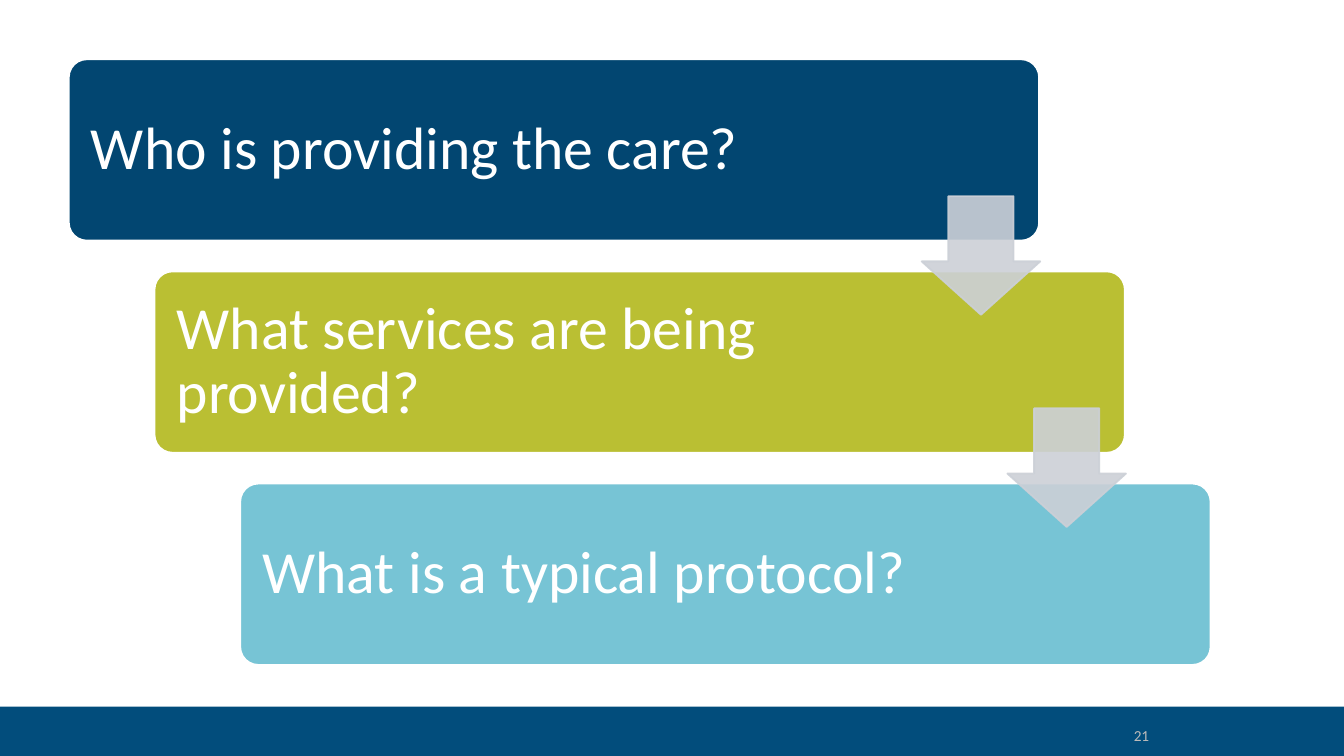
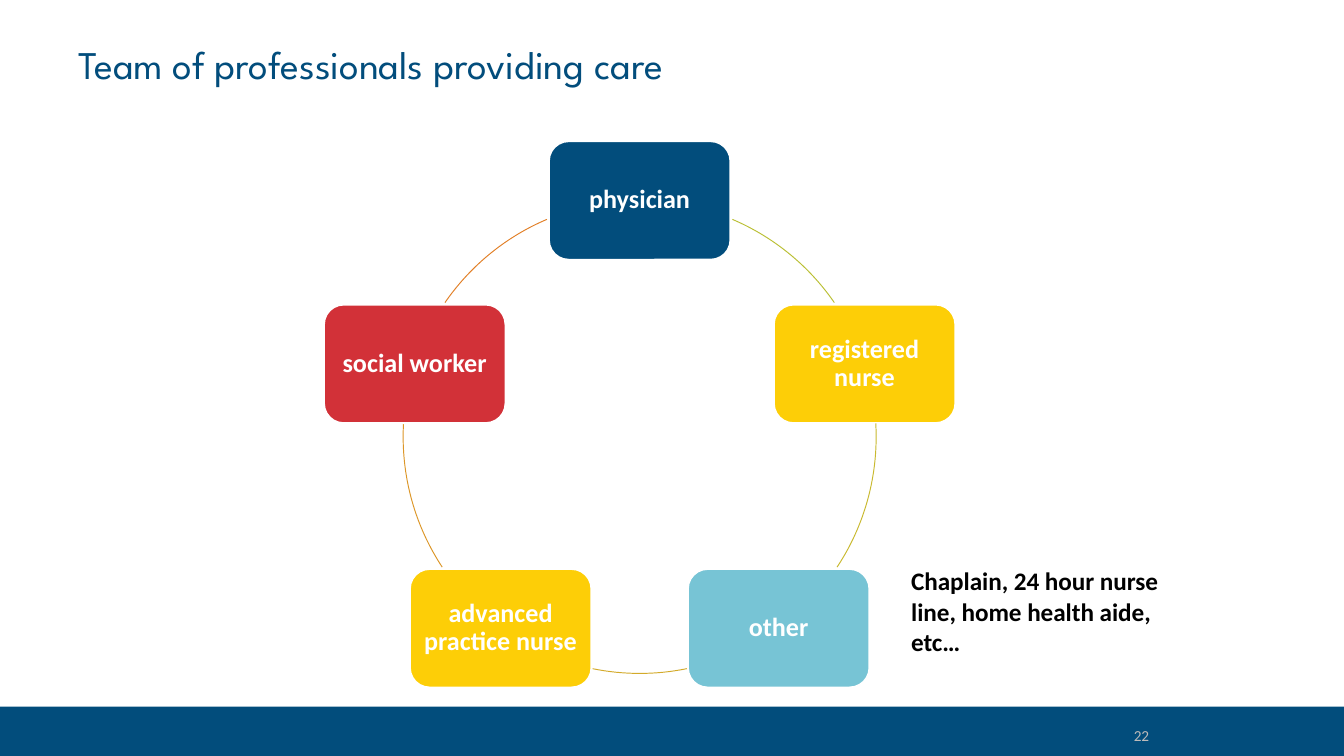
import math
from dataclasses import dataclass

from lxml import etree
from pptx import Presentation
from pptx.dml.color import RGBColor
from pptx.enum import shapes, text
from pptx.oxml import ns
from pptx.util import Cm, Pt


@dataclass(frozen=True)
class Theme:
    navy: str = "024D7C"
    deep_navy: str = "024671"
    lime: str = "BABF33"
    sky: str = "77C4D5"
    yellow: str = "FDCE07"
    red: str = "D23138"
    arrow: str = "CCD0D7"
    white: str = "FFFFFF"
    black: str = "000000"
    page: str = "BEBBBA"
    body_font: str = "Calibri"
    title_font: str = "League Spartan"
    title_size: float = 21
    step_size: float = 32
    card_size: float = 14
    note_size: float = 13.5
    page_size: float = 8.2


T = Theme()
FIRST_PAGE = 21

QUESTIONS = [
    ("Who is providing the care?", T.deep_navy),
    ("What services are being provided?", T.lime),
    ("What is a typical protocol?", T.sky),
]
TEAM_TITLE = "Team of professionals providing care"
# Clockwise from the top: role, card colour
TEAM = [
    ("physician", T.navy),
    ("registered nurse", T.yellow),
    ("other", T.sky),
    ("advanced practice nurse", T.yellow),
    ("social worker", T.red),
]
# Clockwise degrees from east: start, end, colour
ARCS = [
    (293.1, 325.4, T.lime),
    (356.7, 33.4, "C9B92E"),
    (78.5, 101.5, "D3AA2A"),
    (146.6, 183.3, "DC9627"),
    (214.6, 246.9, "E27F26"),
]
NOTE = ["Chaplain, 24 hour nurse line, home health aide,", "etc…"]

WIDTH, HEIGHT = 25.4, 14.29
BAND_TOP = 13.36
STEP_X, STEP_Y, STEP_W, STEP_H = 1.3, 1.12, 18.34, 3.43
SHIFT_X, SHIFT_Y = 1.62, 4.01
ARROW_X, ARROW_Y, ARROW_SIZE = 17.42, 3.71, 2.24
RING_X, RING_Y, RING_R = 12.09, 8.26, 4.47
CARD_W, CARD_H = 3.43, 2.24


def rgb(value):
    return RGBColor.from_string(value)


def style_font(font, size, color, bold=False, name=T.body_font):
    font.name, font.size, font.bold = name, Pt(size), bold
    font.color.rgb = rgb(color)


def add_shape(s, kind, box, fill=None, line=None, line_width=1):
    sp = s.shapes.add_shape(kind, *map(Cm, box))
    sp.shadow.inherit = False
    if fill:
        sp.fill.solid()
        sp.fill.fore_color.rgb = rgb(fill)
    else:
        sp.fill.background()
    if line:
        sp.line.color.rgb = rgb(line)
        sp.line.width = Pt(line_width)
    else:
        sp.line.fill.background()
    return sp


def add_card(s, box, label, fill, size, inset, right=None, bold=False,
             align=text.PP_ALIGN.LEFT):
    sp = add_shape(s, shapes.MSO_SHAPE.ROUNDED_RECTANGLE, box, fill, T.white)
    tf = sp.text_frame
    tf.word_wrap = True
    tf.vertical_anchor = text.MSO_ANCHOR.MIDDLE
    tf.margin_left = tf.margin_top = tf.margin_bottom = Cm(inset)
    tf.margin_right = Cm(right or inset)
    tf.text = label
    p = tf.paragraphs[0]
    p.alignment, p.line_spacing = align, 0.9
    style_font(p.runs[0].font, size, T.white, bold)
    return sp


def add_page_number(s, number):
    """Add a right-aligned slide number field."""
    tf = s.shapes.add_textbox(*map(Cm, (17.68, 13.61, 4.29, 0.76))).text_frame
    tf.word_wrap = True
    p = tf.paragraphs[0]
    p.alignment = text.PP_ALIGN.RIGHT
    r = p.add_run()
    r.text = str(number)
    style_font(r.font, T.page_size, T.page)
    r_xml = r.font._element.getparent()
    r_xml.tag = ns.qn("a:fld")
    r_xml.set("id", "{B6F15528-21DE-4FAA-801E-634DDDAF4B2B}")
    r_xml.set("type", "slidenum")


def new_slide(prs, layout):
    s = prs.slides.add_slide(prs.slide_layouts[layout])
    add_shape(s, shapes.MSO_SHAPE.RECTANGLE,
              (0, BAND_TOP, WIDTH, HEIGHT - BAND_TOP), T.navy)
    add_page_number(s, FIRST_PAGE + len(prs.slides) - 1)
    return s


def add_arrow(s, i):
    box = (ARROW_X + i * SHIFT_X, ARROW_Y + i * SHIFT_Y, ARROW_SIZE, ARROW_SIZE)
    sp = add_shape(s, shapes.MSO_SHAPE.DOWN_ARROW, box, T.arrow, T.arrow)
    sp.adjustments[0], sp.adjustments[1] = 0.55, 0.45
    for color in sp.element.spPr.iter(ns.qn("a:srgbClr")):
        etree.SubElement(color, ns.qn("a:alpha")).set("val", "90000")


def build_questions(prs):
    s = new_slide(prs, 6)
    for i, (question, color) in enumerate(QUESTIONS):
        box = (STEP_X + i * SHIFT_X, STEP_Y + i * SHIFT_Y, STEP_W, STEP_H)
        sp = add_card(s, box, question, color, T.step_size, 0.32, right=4.1)
        sp.adjustments[0] = 0.1
    for i in range(len(QUESTIONS) - 1):
        add_arrow(s, i)


def build_team(prs):
    s = new_slide(prs, 5)
    title = s.shapes.title
    title.left, title.top, title.width, title.height = map(
        Cm, (1.3, 0.58, 21.56, 1.25))
    tf = title.text_frame
    tf.text = TEAM_TITLE
    tf.auto_size = text.MSO_AUTO_SIZE.NONE
    tf.margin_left = tf.margin_right = Cm(0.18)
    tf.margin_top = tf.margin_bottom = Cm(0.1)
    p = tf.paragraphs[0]
    p.alignment = text.PP_ALIGN.LEFT
    style_font(p.runs[0].font, T.title_size, T.navy, name=T.title_font)

    ring = (RING_X - RING_R, RING_Y - RING_R, 2 * RING_R, 2 * RING_R)
    for i, ((role, fill), (start, end, line)) in enumerate(zip(TEAM, ARCS)):
        angle = math.radians(360 * i / len(TEAM) - 90)
        x = RING_X + RING_R * math.cos(angle) - CARD_W / 2
        y = RING_Y + RING_R * math.sin(angle) - CARD_H / 2
        add_card(s, (x, y, CARD_W, CARD_H), role, fill, T.card_size, 0.15,
                 bold=True, align=text.PP_ALIGN.CENTER)
        arc = add_shape(s, shapes.MSO_SHAPE.ARC, ring, line=line, line_width=0.5)
        # 60000 units per degree, and an adjustment of 1 is 100000 units
        arc.adjustments[0], arc.adjustments[1] = start * 0.6, end * 0.6

    tf = s.shapes.add_textbox(*map(Cm, (16.97, 10.57, 5.92, 2.57))).text_frame
    tf.word_wrap = True
    tf.text = "\n".join(NOTE)
    for p in tf.paragraphs:
        style_font(p.runs[0].font, T.note_size, T.black, bold=True)


def main():
    prs = Presentation()
    prs.slide_width, prs.slide_height = Cm(WIDTH), Cm(HEIGHT)
    prs.element.set("firstSlideNum", str(FIRST_PAGE))
    build_questions(prs)
    build_team(prs)
    prs.save("out.pptx")


if __name__ == "__main__":
    main()
